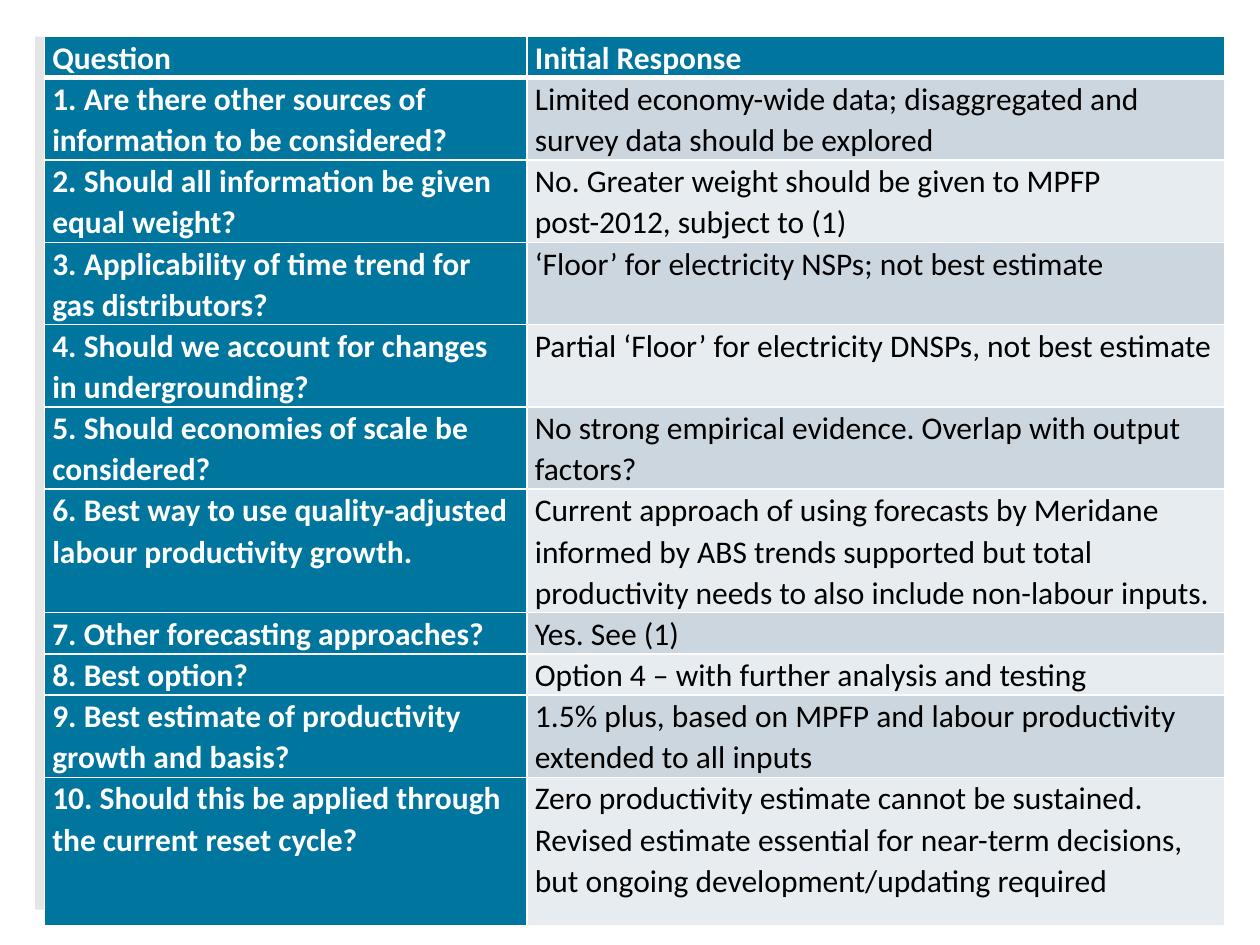
"""Builds a one-slide table of questions and initial responses on productivity."""
import lxml.etree
import pptx
import pptx.dml.color
import pptx.enum.shapes
import pptx.oxml.ns
import pptx.util

Pt = pptx.util.Pt
qn = pptx.oxml.ns.qn

TEAL, WHITE, BLACK = "00759E", "FFFFFF", "000000"
BANDS = ["CCD6DF", "E7ECF0"]
COLUMN_WIDTHS = [275.8, 398.9]
ONE_LINE, TWO_LINES, THREE_LINES, LAST_ROW = 22.3, 46.1, 68.4, 85
ROWS = [
    (ONE_LINE, "Question", "Initial Response"),
    (TWO_LINES, "1. Are there other sources of information to be considered?",
     "Limited economy-wide data; disaggregated and survey data should be explored"),
    (TWO_LINES, "2. Should all information be given equal weight?",
     "No. Greater weight should be given to MPFP post-2012, subject to (1)"),
    (TWO_LINES, "3. Applicability of time trend for gas distributors?",
     "‘Floor’ for electricity NSPs; not best estimate"),
    (TWO_LINES, "4. Should we account for changes in undergrounding?",
     "Partial ‘Floor’ for electricity DNSPs, not best estimate"),
    (TWO_LINES, "5. Should economies of scale be considered?",
     "No strong empirical evidence. Overlap with output factors?"),
    (THREE_LINES, "6. Best way to use quality-adjusted labour productivity growth.",
     "Current approach of using forecasts by Meridane informed by ABS trends supported "
     "but total productivity needs to also include non-labour inputs."),
    (ONE_LINE, "7. Other forecasting approaches?", "Yes. See (1)"),
    (ONE_LINE, "8. Best option?", "Option 4 – with further analysis and testing"),
    (TWO_LINES, "9. Best estimate of productivity growth and basis?",
     "1.5% plus, based on MPFP and labour productivity extended to all inputs"),
    (LAST_ROW, "10. Should this be applied through the current reset cycle?",
     "Zero productivity estimate cannot be sustained. Revised estimate essential for "
     "near-term decisions, but ongoing development/updating required"),
]


def rgb(color):
    """Turn a hex string into a colour."""
    return pptx.dml.color.RGBColor.from_string(color)


def add_panel(slide, left, top, width, height, color, opacity):
    """Add a translucent rectangle without an outline."""
    panel = slide.shapes.add_shape(
        pptx.enum.shapes.MSO_SHAPE.RECTANGLE, Pt(left), Pt(top), Pt(width), Pt(height))
    panel.shadow.inherit = False
    panel.line.fill.background()
    panel.fill.solid()
    panel.fill.fore_color.rgb = rgb(color)
    tint = panel.fill._xPr.find(".//" + qn("a:srgbClr"))
    lxml.etree.SubElement(tint, qn("a:alpha"), val=str(opacity * 1000))


def add_borders(cell, color, bottom_width):
    """Draw hairline borders with a chosen bottom width."""
    properties = cell._tc.get_or_add_tcPr()
    for side, width in zip("LRTB", [1, 1, 1, bottom_width]):
        border = lxml.etree.SubElement(properties, qn(f"a:ln{side}"), w=str(Pt(width)))
        fill = lxml.etree.SubElement(border, qn("a:solidFill"))
        lxml.etree.SubElement(fill, qn("a:srgbClr"), val=color)


def style_cell(cell, text, fill, color, bold, bottom_width):
    """Write and format one table cell."""
    add_borders(cell, WHITE, bottom_width)
    cell.fill.solid()
    cell.fill.fore_color.rgb = rgb(fill)
    cell.margin_left = cell.margin_right = Pt(4.5)
    cell.margin_top = cell.margin_bottom = 0
    cell.text = text
    paragraph = cell.text_frame.paragraphs[0]
    paragraph.line_spacing = 1.07
    font = paragraph.font
    font.name, font.size, font.bold = "Calibri", Pt(18), bold
    font.color.rgb = rgb(color)


def add_response_table(slide, left, top):
    """Add the table with a strong first row and column and banded responses."""
    heights = [height for height, *_ in ROWS]
    table = slide.shapes.add_table(
        len(ROWS), len(COLUMN_WIDTHS), Pt(left), Pt(top),
        Pt(sum(COLUMN_WIDTHS)), Pt(sum(heights))).table
    for column, width in zip(table.columns, COLUMN_WIDTHS):
        column.width = Pt(width)
    for row_index, (height, *texts) in enumerate(ROWS):
        table.rows[row_index].height = Pt(height)
        is_header = row_index == 0
        for column_index, text in enumerate(texts):
            strong = is_header or column_index == 0
            fill = TEAL if strong else BANDS[(row_index - 1) % 2]
            style_cell(table.cell(row_index, column_index), text, fill,
                       WHITE if strong else BLACK, strong, 3 if is_header else 1)


def main():
    """Build and save the slide."""
    presentation = pptx.Presentation()
    presentation.slide_width, presentation.slide_height = Pt(720), Pt(540)
    slide = presentation.slides.add_slide(presentation.slide_layouts[6])
    add_panel(slide, 20, 20.9, 680.4, 499, BLACK, 10)
    add_response_table(slide, 25.4, 20.9)
    presentation.save("out.pptx")


if __name__ == "__main__":
    main()
